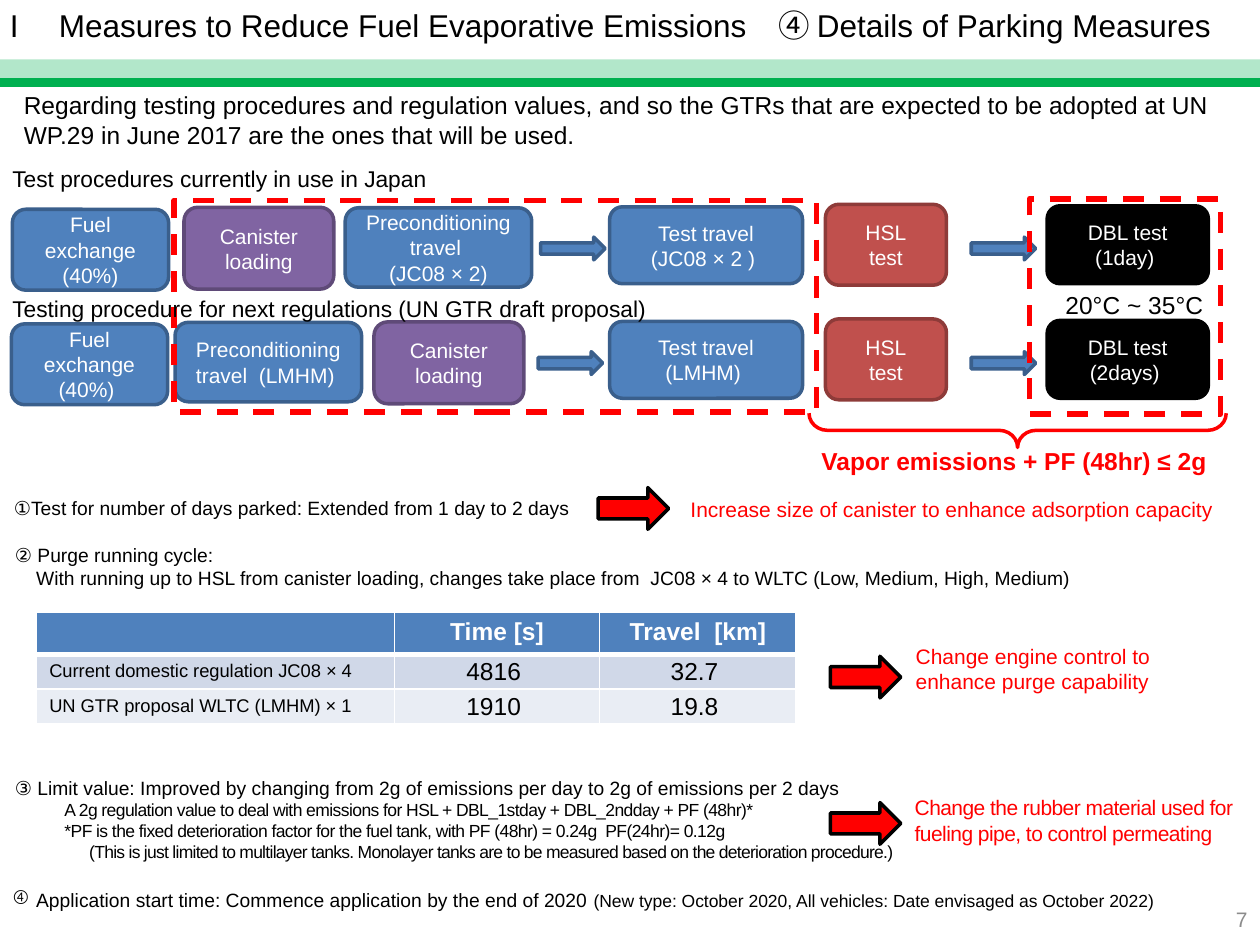
"""Build the slide on parking measures for fuel evaporative emissions."""
from lxml.etree import SubElement
from pptx import Presentation
from pptx.dml.color import RGBColor
from pptx.enum.dml import MSO_LINE_DASH_STYLE as Dash
from pptx.enum.shapes import MSO_SHAPE as Shape
from pptx.enum.text import MSO_ANCHOR as Anchor, MSO_AUTO_SIZE as AutoSize, PP_ALIGN as Align
from pptx.oxml.ns import qn
from pptx.util import Cm, Pt

BLACK = RGBColor(0x00, 0x00, 0x00)
WHITE = RGBColor(0xFF, 0xFF, 0xFF)
RED = RGBColor(0xFF, 0x00, 0x00)
GREEN = RGBColor(0x00, 0xB0, 0x50)
GRAY = RGBColor(0x8C, 0x8C, 0x8C)
BLUE = RGBColor(0x4F, 0x81, 0xBD)
DARK_BLUE = RGBColor(0x3A, 0x5F, 0x8C)
PURPLE = RGBColor(0x80, 0x64, 0xA2)
DARK_PURPLE = RGBColor(0x5F, 0x4A, 0x78)
BRICK = RGBColor(0xC0, 0x50, 0x4D)
DARK_BRICK = RGBColor(0x8E, 0x3B, 0x39)
BAND_DARK = RGBColor(0xD0, 0xD8, 0xE8)
BAND_LIGHT = RGBColor(0xE9, 0xED, 0xF4)

STEPS = {
    "precondition": (4.19, 3.76, 1.6, BLUE, DARK_BLUE),
    "fuel": (4.22, 3.15, 1.63, BLUE, DARK_BLUE),
    "hsl": (4.12, 2.44, 1.63, BRICK, DARK_BRICK),
    "dbl": (4.15, 3.25, 1.57, BLACK, BLACK),
    "travel": (4.17, 3.89, 1.55, BLUE, DARK_BLUE),
    "canister": (4.18, 3.02, 1.65, PURPLE, DARK_PURPLE),
}
CURRENT_PROCEDURE = [
    ("precondition", 6.96, ["Preconditioning travel ", "(JC08 × 2)"]),
    ("fuel", 0.25, ["Fuel exchange (40%)"]),
    ("hsl", 16.64, ["HSL", "test"]),
    ("dbl", 21.11, ["DBL test (1day) "]),
    ("travel", 12.29, ["Test travel", "(JC08 × 2 ) "]),
    ("canister", 3.71, ["Canister loading"]),
]
NEXT_PROCEDURE = [
    ("precondition", 3.53, ["Preconditioning travel  (LMHM) "]),
    ("fuel", 0.23, ["Fuel exchange (40%) "]),
    ("hsl", 16.64, ["HSL", "test"]),
    ("dbl", 21.11, ["DBL test (2days) "]),
    ("travel", 12.29, ["Test travel (LMHM) "]),
    ("canister", 7.54, ["Canister loading"]),
]
ROW_OFFSET = 2.31
CYCLES = [
    ["", "Time [s]", "Travel  [km]"],
    ["Current domestic regulation JC08 × 4", "4816 ", "32.7 "],
    ["UN GTR proposal WLTC (LMHM) × 1", "1910 ", "19.8 "],
]


class SlideBuilder:
    """Hold the style and the current slide, and draw each kind of element."""

    font = "Arial"

    def __init__(self, slide):
        self.slide = slide

    def run(self, paragraph, text, size, color=BLACK, bold=False, spacing=0):
        run = paragraph.add_run()
        run.text = text
        run.font.name = self.font
        run.font.size = Pt(size)
        run.font.bold = bold
        run.font.color.rgb = color
        if spacing:
            run.font._element.set("spc", str(round(spacing * 100)))

    def paragraph(self, frame, text, size, align=Align.LEFT, indent=0, **style):
        paragraph = frame.paragraphs[0] if not frame.text else frame.add_paragraph()
        paragraph.alignment = align
        if indent:
            paragraph._p.get_or_add_pPr().set("indent", str(Cm(indent)))
        self.run(paragraph, text, size, **style)
        return paragraph

    def text(self, left, top, width, height, lines, size, **style):
        box = self.slide.shapes.add_textbox(Cm(left), Cm(top), Cm(width), Cm(height))
        frame = box.text_frame
        frame.word_wrap = True
        frame.auto_size = AutoSize.SHAPE_TO_FIT_TEXT
        for line in lines:
            self.paragraph(frame, line, size, **style)
        return frame

    def bullet(self, paragraph, character, hanging):
        properties = paragraph._p.get_or_add_pPr()
        properties.set("marL", str(Cm(hanging)))
        properties.set("indent", str(-Cm(hanging)))
        SubElement(properties, qn("a:buChar"), char=character)

    def shape(self, kind, left, top, width, height, fill=None, line=BLACK, weight=2):
        shape = self.slide.shapes.add_shape(kind, Cm(left), Cm(top), Cm(width), Cm(height))
        shape.shadow.inherit = False
        if fill is None:
            shape.fill.background()
        else:
            shape.fill.solid()
            shape.fill.fore_color.rgb = fill
        if line is None:
            shape.line.fill.background()
        else:
            shape.line.color.rgb = line
            shape.line.width = Pt(weight)
        return shape

    def step(self, name, left, offset, lines):
        top, width, height, fill, line = STEPS[name]
        shape = self.shape(Shape.ROUNDED_RECTANGLE, left, top + offset, width, height, fill, line)
        frame = shape.text_frame
        frame.word_wrap = True
        frame.vertical_anchor = Anchor.MIDDLE
        for text in lines:
            self.paragraph(frame, text, 12, Align.CENTER, color=WHITE)

    def dashed_frame(self, left, top, width, height):
        frame = self.shape(Shape.RECTANGLE, left, top, width, height, line=RED, weight=3)
        frame.line.dash_style = Dash.DASH

    def borders(self, cell, bottom):
        properties = cell._tc.get_or_add_tcPr()
        for side, weight in (("lnL", 1), ("lnR", 1), ("lnT", 1), ("lnB", bottom)):
            line = SubElement(properties, qn(f"a:{side}"), w=str(Pt(weight)))
            fill = SubElement(line, qn("a:solidFill"))
            SubElement(fill, qn("a:srgbClr"), val=str(WHITE))

    def table(self, left, top, widths, row_height, rows):
        graphic = self.slide.shapes.add_table(len(rows), len(widths), Cm(left), Cm(top),
                                              Cm(sum(widths)), Cm(row_height * len(rows)))
        table = graphic.table
        for column, width in zip(table.columns, widths):
            column.width = Cm(width)
        for r, row in enumerate(rows):
            for c, text in enumerate(row):
                cell = table.cell(r, c)
                self.borders(cell, 3 if r == 0 else 1)
                cell.fill.solid()
                cell.fill.fore_color.rgb = (BLUE, BAND_DARK, BAND_LIGHT)[r]
                if r and c:
                    cell.margin_left = cell.margin_right = cell.margin_top = Cm(0.03)
                    cell.margin_bottom = 0
                if r and (c or r == 2):
                    cell.vertical_anchor = Anchor.MIDDLE
                if text:
                    self.paragraph(cell.text_frame, text, 14 if c else 10.5,
                                   Align.CENTER if c else Align.LEFT,
                                   color=BLACK if r else WHITE, bold=r == 0)
                else:
                    SubElement(cell.text_frame.paragraphs[0]._p, qn("a:endParaRPr"), sz="1400")


def main():
    presentation = Presentation()
    presentation.slide_width, presentation.slide_height = Cm(25.4), Cm(19.05)
    slide = presentation.slides.add_slide(presentation.slide_layouts[6])
    builder = SlideBuilder(slide)

    builder.shape(Shape.RECTANGLE, 0, 1.6, 25.4, 0.13, GREEN, GREEN)
    band = builder.shape(Shape.RECTANGLE, 0, 1.2, 25.4, 0.45, GREEN, None)
    color = band._element.spPr.find(qn("a:solidFill"))[0]
    SubElement(color, qn("a:alpha"), val="30000")
    builder.text(-0.05, 0, 25.45, 1.27, ["I  Measures to Reduce Fuel Evaporative Emissions ④ Details of Parking Measures".replace("I  ", "I 　").replace(" ④", "　④")], 18)
    builder.text(0.23, 1.7, 24.87, 1.45, ["Regarding testing procedures and regulation values, and so the GTRs that are expected to be adopted at UN WP.29 in June 2017 are the ones that will be used."], 14)

    purge = builder.text(0.05, 10.82, 25.45, 1.19, ["② Purge running cycle:"], 11)
    builder.paragraph(purge, "With running up to HSL from canister loading, changes take place from  JC08 × 4 to WLTC (Low, Medium, High, Medium)", 11, indent=0.43)
    number = builder.text(19.69, 18.01, 5.71, 1.02, ["7"], 12, align=Align.RIGHT, color=GRAY)
    number.auto_size = AutoSize.NONE
    number.vertical_anchor = Anchor.MIDDLE
    start = builder.text(0, 17.78, 25.4, 0.74, ["Application start time: Commence application by the end of 2020 "], 11)
    builder.bullet(start.paragraphs[0], "④", 0.48)
    builder.run(start.paragraphs[0], "(New type: October 2020, All vehicles: Date envisaged as October 2022)", 10)

    for index, (procedure, arrow_left) in enumerate([(CURRENT_PROCEDURE, 10.9), (NEXT_PROCEDURE, 10.85)]):
        offset = index * ROW_OFFSET
        for name, left, lines in procedure:
            builder.step(name, left, offset, lines)
        for left in (arrow_left, 19.58):
            builder.shape(Shape.RIGHT_ARROW, left, 4.78 + offset, 1.3, 0.46, BLUE, DARK_BLUE)
    builder.dashed_frame(20.75, 4.01, 3.86, 4.34)
    builder.dashed_frame(3.51, 4.04, 12.95, 4.27)
    builder.text(0, 5.82, 13.69, 0.81, ["Testing procedure for next regulations (UN GTR draft proposal)"], 13)
    builder.text(0, 3.2, 11, 0.81, ["Test procedures currently in use in Japan"], 13)

    brace = builder.shape(Shape.LEFT_BRACE, 20.17, 4.47, 0.69, 8.41, line=RED)
    brace.rotation = 270
    brace.adjustments[0] = 0.54
    builder.text(15.49, 8.86, 9.91, 0.86, ["Vapor emissions + PF (48hr) ≤ 2g"], 14, align=Align.CENTER, color=RED, bold=True)
    builder.text(21.23, 5.72, 3.48, 0.86, ["20°C ~ 35°C"], 14)

    limit = builder.text(0.05, 15.52, 18.24, 2.01, ["③ Limit value: Improved by changing from 2g of emissions per day to 2g of emissions per 2 days"], 11)
    for text, indent, spacing in [
        ("A 2g regulation value to deal with emissions for HSL + DBL_1stday + DBL_2ndday + PF (48hr)*", 1, -0.3),
        ("*PF is the fixed deterioration factor for the fuel tank, with PF (48hr) = 0.24g  PF(24hr)= 0.12g", 1, -0.3),
        ("(This is just limited to multilayer tanks. Monolayer tanks are to be measured based on the deterioration procedure.)", 1.5, -0.4),
    ]:
        builder.paragraph(limit, text, 10, indent=indent, spacing=spacing)
    builder.table(0.74, 12.34, [7.21, 4.14, 3.96], 0.61, CYCLES)

    builder.text(0.03, 9.88, 24.74, 0.74, ["①Test for number of days parked: Extended from 1 day to 2 days"], 11)
    for arrow_left, arrow_top, left, top, width, height, text, spacing in [
        (12.06, 9.83, 13.67, 9.88, 12.29, 0.76, "Increase size of canister to enhance adsorption capacity", 0),
        (16.74, 13.23, 18.21, 12.85, 6.88, 1.27, "Change engine control to enhance purge capability", 0),
        (16.74, 16.18, 18.19, 15.9, 7.21, 1.27, "Change the rubber material used for fueling pipe, to control permeating", -0.3),
    ]:
        builder.shape(Shape.RIGHT_ARROW, arrow_left, arrow_top, 1.42, 0.84, RED)
        builder.text(left, top, width, height, [text], 12, color=RED, spacing=spacing)

    presentation.save("out.pptx")


if __name__ == "__main__":
    main()
